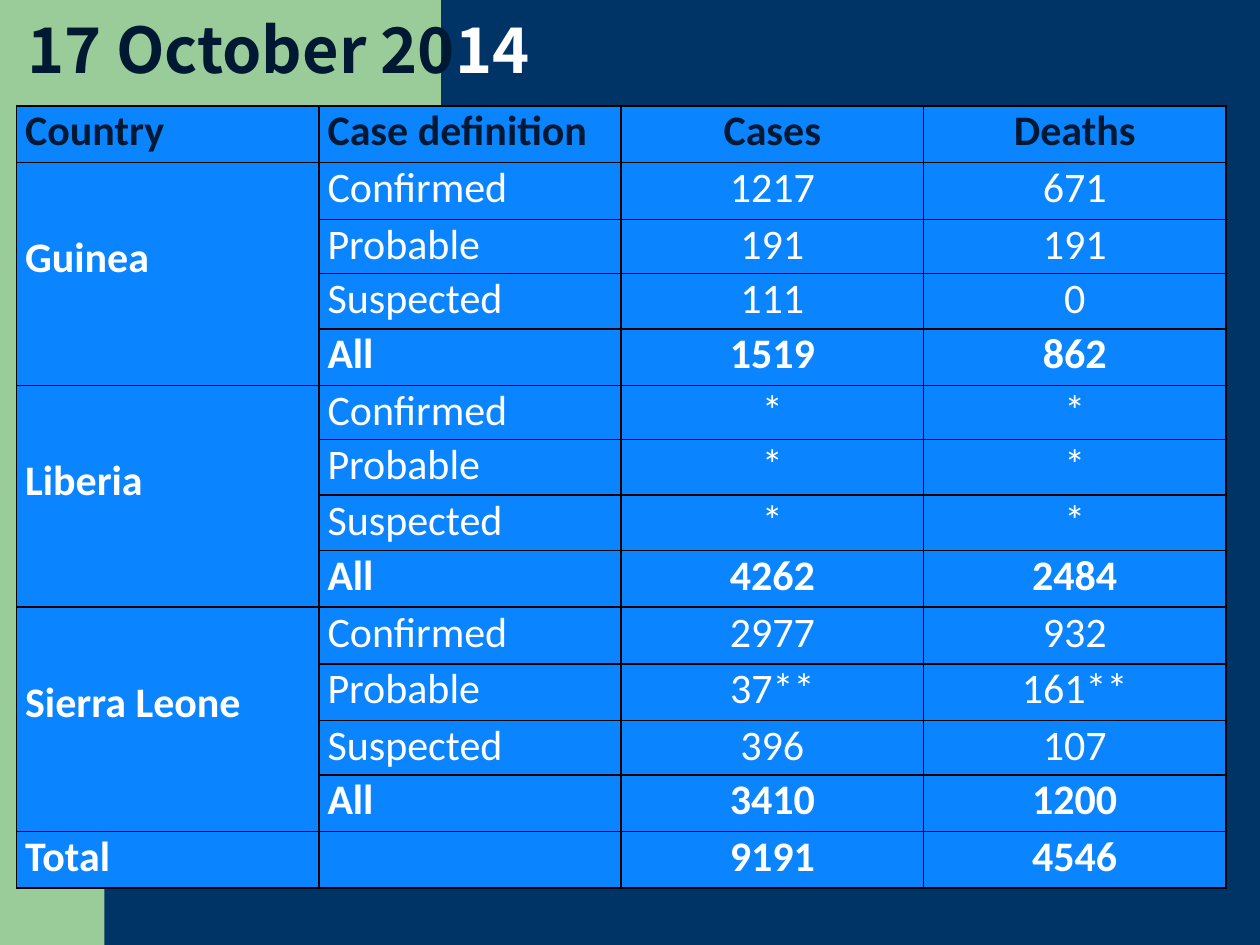
from lxml.etree import SubElement
from pptx import Presentation
from pptx.dml.color import RGBColor
from pptx.enum.shapes import MSO_SHAPE as Shape
from pptx.enum.text import MSO_ANCHOR as Anchor, PP_ALIGN as Align
from pptx.oxml.ns import qn
from pptx.util import Inches, Pt

NAVY = RGBColor(0x00, 0x33, 0x66)
GREEN = RGBColor(0x99, 0xCC, 0x99)
BLUE = RGBColor(0x0A, 0x85, 0xFF)
INK = RGBColor(0x00, 0x19, 0x33)
WHITE = RGBColor(0xFF, 0xFF, 0xFF)
BLACK = RGBColor(0x00, 0x00, 0x00)

TITLE_FONT = "Noto Sans CJK SC"
TABLE_FONT = "Calibri"
HEADERS = ("Country", "Case definition", "Cases", "Deaths")
DEFINITIONS = ("Confirmed", "Probable", "Suspected", "All")
COUNTRIES = {
    "Guinea": (("1217", "671"), ("191", "191"), ("111", "0"), ("1519", "862")),
    "Liberia": (("*", "*"), ("*", "*"), ("*", "*"), ("4262", "2484")),
    "Sierra Leone": (("2977", "932"), ("37**", "161**"), ("396", "107"), ("3410", "1200")),
}
TOTAL = ("Total", "", "9191", "4546")
COLUMN_WIDTH = 2.4
ROW_HEIGHTS = (0.45, 0.45, 0.43, 0.44, 0.45, 0.43, 0.44,
               0.44, 0.45, 0.45, 0.45, 0.43, 0.45, 0.45)


def add_run(paragraph, text, font=TABLE_FONT, size=24, color=WHITE, bold=False):
    run = paragraph.add_run()
    run.text = text
    run.font.name = font
    run.font.size = Pt(size)
    run.font.bold = bold
    run.font.color.rgb = color


def add_panel(slide, left, top, width, height):
    panel = slide.shapes.add_shape(
        Shape.RECTANGLE, Inches(left), Inches(top), Inches(width), Inches(height))
    panel.shadow.inherit = False
    panel.fill.solid()
    panel.fill.fore_color.rgb = GREEN
    panel.line.fill.background()


def add_title(slide, *parts):
    box = slide.shapes.add_textbox(Inches(0.12), Inches(-0.02), Inches(8.75), Inches(0.76))
    frame = box.text_frame
    frame.word_wrap = True
    frame.vertical_anchor = Anchor.BOTTOM
    paragraph = frame.paragraphs[0]
    paragraph.line_spacing = 0.9
    for text, color in parts:
        add_run(paragraph, text, font=TITLE_FONT, size=36, color=color, bold=True)


def style_cell(cell):
    properties = cell._tc.get_or_add_tcPr()
    for side in ("a:lnL", "a:lnR", "a:lnT", "a:lnB"):
        line = SubElement(properties, qn(side), w=str(Pt(1)))
        fill = SubElement(line, qn("a:solidFill"))
        SubElement(fill, qn("a:srgbClr"), val=str(BLACK))
    cell.fill.solid()
    cell.fill.fore_color.rgb = BLUE
    cell.margin_left = cell.margin_right = Inches(0.07)
    cell.margin_top = cell.margin_bottom = 0


def fill_cell(cell, text, align=Align.LEFT, **text_format):
    paragraph = cell.text_frame.paragraphs[0]
    paragraph.alignment = align
    if text:
        add_run(paragraph, text, **text_format)


def fill_row(table, row, texts, first_column=0, **text_format):
    for column, text in enumerate(texts, first_column):
        align = Align.CENTER if column >= 2 else Align.LEFT
        fill_cell(table.cell(row, column), text, align=align, **text_format)


def fill_country(table, first_row, country, counts):
    country_cell = table.cell(first_row, 0)
    country_cell.merge(table.cell(first_row + len(DEFINITIONS) - 1, 0))
    country_cell.margin_top = Inches(0.56)
    fill_cell(country_cell, country, bold=True)
    for row, (definition, values) in enumerate(zip(DEFINITIONS, counts), first_row):
        fill_row(table, row, (definition, *values), first_column=1, bold=definition == "All")


def add_case_table(slide):
    table = slide.shapes.add_table(
        len(ROW_HEIGHTS), len(HEADERS), Inches(0.13), Inches(0.84),
        Inches(COLUMN_WIDTH * len(HEADERS)), Inches(sum(ROW_HEIGHTS))).table
    table.first_row = table.horz_banding = False
    for column in table.columns:
        column.width = Inches(COLUMN_WIDTH)
    for row, height in zip(table.rows, ROW_HEIGHTS):
        row.height = Inches(height)
    for cell in table.iter_cells():
        style_cell(cell)
    fill_row(table, 0, HEADERS, color=INK, bold=True)
    for index, (country, counts) in enumerate(COUNTRIES.items()):
        fill_country(table, 1 + index * len(DEFINITIONS), country, counts)
    fill_row(table, len(ROW_HEIGHTS) - 1, TOTAL, bold=True)


def main():
    presentation = Presentation()
    presentation.slide_width = Inches(10)
    presentation.slide_height = Inches(7.5)
    slide = presentation.slides.add_slide(presentation.slide_layouts[6])
    slide.background.fill.solid()
    slide.background.fill.fore_color.rgb = NAVY
    add_panel(slide, 0, 0, 0.83, 7.5)
    add_panel(slide, 0.75, 0, 2.75, 1.17)
    add_title(slide, ("17 October 20", INK), ("14", WHITE))
    add_case_table(slide)
    presentation.save("out.pptx")


if __name__ == "__main__":
    main()
